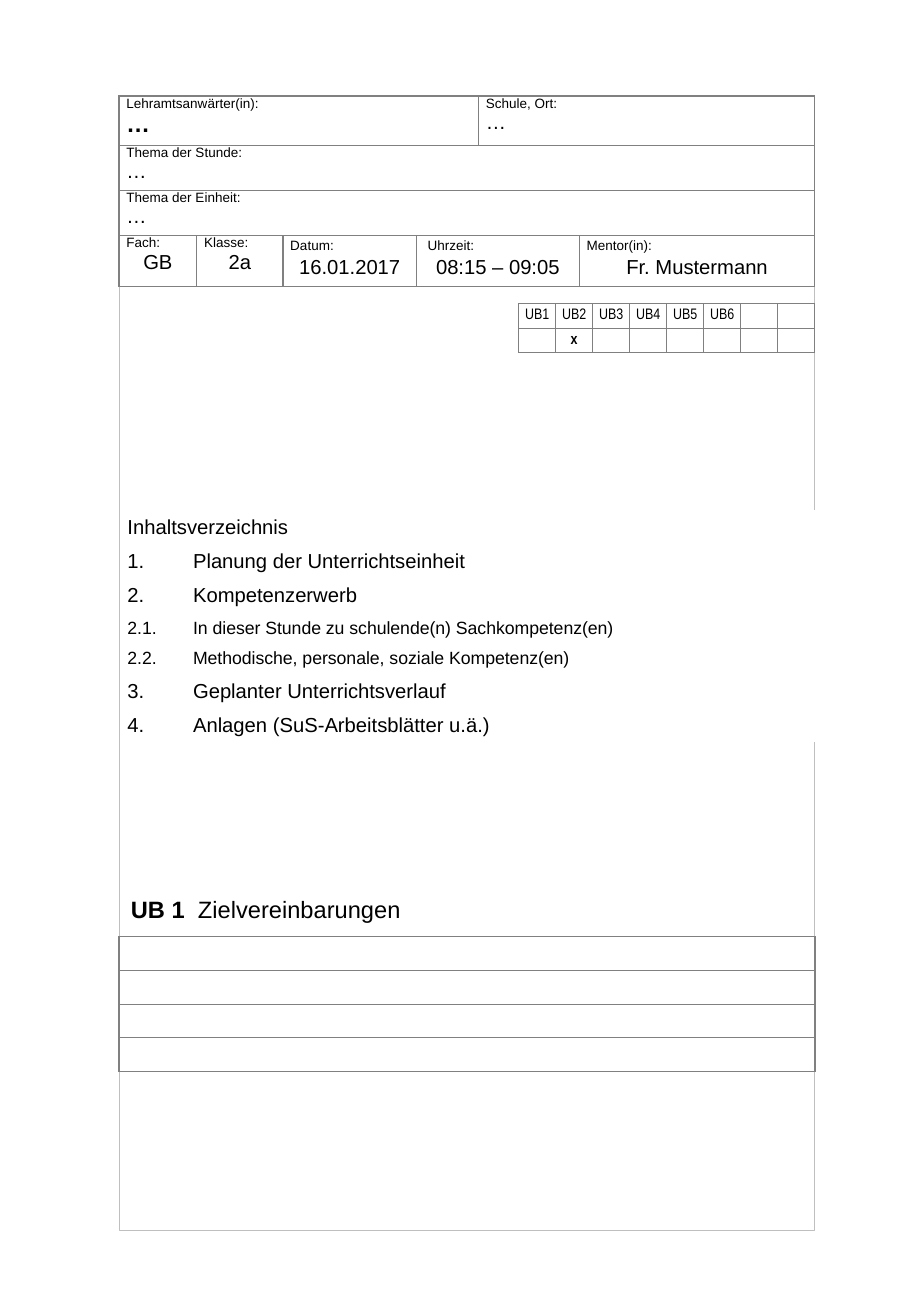
from lxml import etree
from pptx import Presentation
from pptx.dml.color import RGBColor
from pptx.enum import shapes, text
from pptx.oxml import ns
from pptx.util import Inches, Pt

BLACK = RGBColor(0x00, 0x00, 0x00)
WHITE = RGBColor(0xFF, 0xFF, 0xFF)
GRID = RGBColor(0x80, 0x80, 0x80)
FRAME = RGBColor(0xBF, 0xBF, 0xBF)

LEFT, TOP, WIDTH, HEIGHT = 0.98, 0.79, 5.73, 9.34
CENTER = text.PP_ALIGN.CENTER
JUSTIFY = text.PP_ALIGN.JUSTIFY
MIDDLE = text.MSO_ANCHOR.MIDDLE


def write(para, words, size=12, bold=False, font="Arial", align=None, spacing=None):
    """Add one formatted run to a paragraph."""
    span = para.add_run()
    span.text = words
    span.font.size = Pt(size)
    span.font.bold = bold
    span.font.name = font
    span.font.color.rgb = BLACK
    if align is not None:
        para.alignment = align
    if spacing is not None:
        para.line_spacing = spacing


def set_borders(cell, width):
    """Draw all four borders of a cell, or none if the width is 0."""
    props = cell._tc.get_or_add_tcPr()
    for index, side in enumerate(("a:lnL", "a:lnR", "a:lnT", "a:lnB")):
        line = etree.Element(ns.qn(side), w=str(Pt(width)))
        if width:
            fill = etree.SubElement(line, ns.qn("a:solidFill"))
            etree.SubElement(fill, ns.qn("a:srgbClr"), val=str(GRID))
        else:
            etree.SubElement(line, ns.qn("a:noFill"))
        props.insert(index, line)


def add_grid(page, box, widths, heights, border=0, insets=(0, 0, 0, 0), fill=None, anchor=None):
    """Add an empty table; box is left and top, insets are left, top, right, bottom."""
    left, top = box
    table = page.shapes.add_table(
        len(heights), len(widths), Inches(left), Inches(top),
        Inches(sum(widths)), Inches(sum(heights))).table
    table.first_row = table.horz_banding = False
    for column, width in zip(table.columns, widths):
        column.width = Inches(width)
    for row, height in zip(table.rows, heights):
        row.height = Inches(height)
    for cell in table.iter_cells():
        (cell.margin_left, cell.margin_top,
         cell.margin_right, cell.margin_bottom) = map(Inches, insets)
        if anchor is not None:
            cell.vertical_anchor = anchor
        if fill is None:
            cell.fill.background()
        else:
            cell.fill.solid()
            cell.fill.fore_color.rgb = fill
        set_borders(cell, border)
        # Small text size keeps empty rows low
        para = cell.text_frame.paragraphs[0]
        etree.SubElement(para._p, ns.qn("a:endParaRPr"), sz="800")
    return table


def add_frame(page, box):
    left, top, width, height = map(Inches, box)
    frame = page.shapes.add_shape(shapes.MSO_SHAPE.RECTANGLE, left, top, width, height)
    frame.shadow.inherit = False
    frame.fill.background()
    frame.line.color.rgb = FRAME
    frame.line.width = Pt(0.5)


def add_lesson_data(page, box):
    table = add_grid(page, box, (0.64, 0.71, 1.1, 0.51, 0.83, 1.94),
                     (0.4, 0.37, 0.37, 0.42), border=0.75,
                     insets=(0.06, 0, 0.06, 0.06))
    # Row, first column, last column, label, value, format of value, line spacing
    fields = (
        (0, 0, 3, "Lehramtsanwärter(in):", "…", {"size": 14, "bold": True}, None),
        (0, 4, 5, "Schule, Ort:", "…", {}, None),
        (1, 0, 5, "Thema der Stunde:", "…", {}, None),
        (2, 0, 5, "Thema der Einheit:", "…", {}, None),
        (3, 0, 0, "Fach:", "GB", {"align": CENTER}, None),
        (3, 1, 1, "Klasse:", "2a", {"align": CENTER}, None),
        (3, 2, 2, "Datum:", "16.01.2017", {"align": CENTER}, 1.15),
        (3, 3, 4, " Uhrzeit:", "08:15 – 09:05", {"align": CENTER}, 1.15),
        (3, 5, 5, "Mentor(in):", "Fr. Mustermann", {"align": CENTER}, 1.15),
    )
    for row, first, last, label, value, style, spacing in fields:
        cell = table.cell(row, first)
        if last > first:
            cell.merge(table.cell(row, last))
        write(cell.text_frame.paragraphs[0], label, size=8, spacing=spacing)
        write(cell.text_frame.add_paragraph(), value, spacing=spacing, **style)


def add_visits(page, box):
    left, top, width = box
    table = add_grid(page, (left, top), [width / 8] * 8, [0.2] * 2,
                     border=0.5, anchor=MIDDLE)
    style = {"size": 9, "font": "Arial Narrow", "align": CENTER}
    for number in range(1, 7):
        para = table.cell(0, number - 1).text_frame.paragraphs[0]
        write(para, f"UB{number}", **style)
    write(table.cell(1, 1).text_frame.paragraphs[0], "x", bold=True, **style)


def add_contents(page, box):
    chapters = (
        ("1.", "Planung der Unterrichtseinheit", 12),
        ("2.", "Kompetenzerwerb", 12),
        ("2.1.", "In dieser Stunde zu schulende(n) Sachkompetenz(en)", 10.5),
        ("2.2.", "Methodische, personale, soziale Kompetenz(en)", 10.5),
        ("3.", "Geplanter Unterrichtsverlauf", 12),
        ("4.", "Anlagen (SuS-Arbeitsblätter u.ä.)", 12),
    )
    heights = [0.28] + [0.28 if size == 12 else 0.25 for _, _, size in chapters]
    table = add_grid(page, box, (0.54, 5.16), heights, fill=WHITE,
                     insets=(0.04, 0.04, 0, 0.04), anchor=MIDDLE)
    heading = table.cell(0, 0)
    heading.merge(table.cell(0, 1))
    write(heading.text_frame.paragraphs[0], "Inhaltsverzeichnis", align=JUSTIFY)
    for row, (number, title, size) in enumerate(chapters, 1):
        write(table.cell(row, 0).text_frame.paragraphs[0], number, size=size)
        write(table.cell(row, 1).text_frame.paragraphs[0], title, size=size, align=JUSTIFY)


def add_goals(page, box):
    left, top, width = box
    # Heading
    heading = page.shapes.add_textbox(Inches(left), Inches(top), Inches(width), Inches(0.34))
    heading.text_frame.word_wrap = True
    heading.text_frame.vertical_anchor = MIDDLE
    para = heading.text_frame.paragraphs[0]
    write(para, "UB 1", size=14, bold=True)
    write(para, "  Zielvereinbarungen", size=14)
    # Empty lines to fill in
    add_grid(page, (left, top + 0.4), [width], [1.11 / 4] * 4, border=0.75)


def main():
    deck = Presentation()
    deck.slide_width, deck.slide_height = Inches(7.5), Inches(10.83)
    page = deck.slides.add_slide(deck.slide_layouts[6])
    add_frame(page, (LEFT, TOP, WIDTH, HEIGHT))
    add_lesson_data(page, (LEFT, TOP))
    add_visits(page, (LEFT + WIDTH - 2.44, 2.5, 2.44))
    add_goals(page, (LEFT, 7.31, WIDTH))
    add_contents(page, (1.01, 4.2))
    deck.save("out.pptx")


if __name__ == "__main__":
    main()
